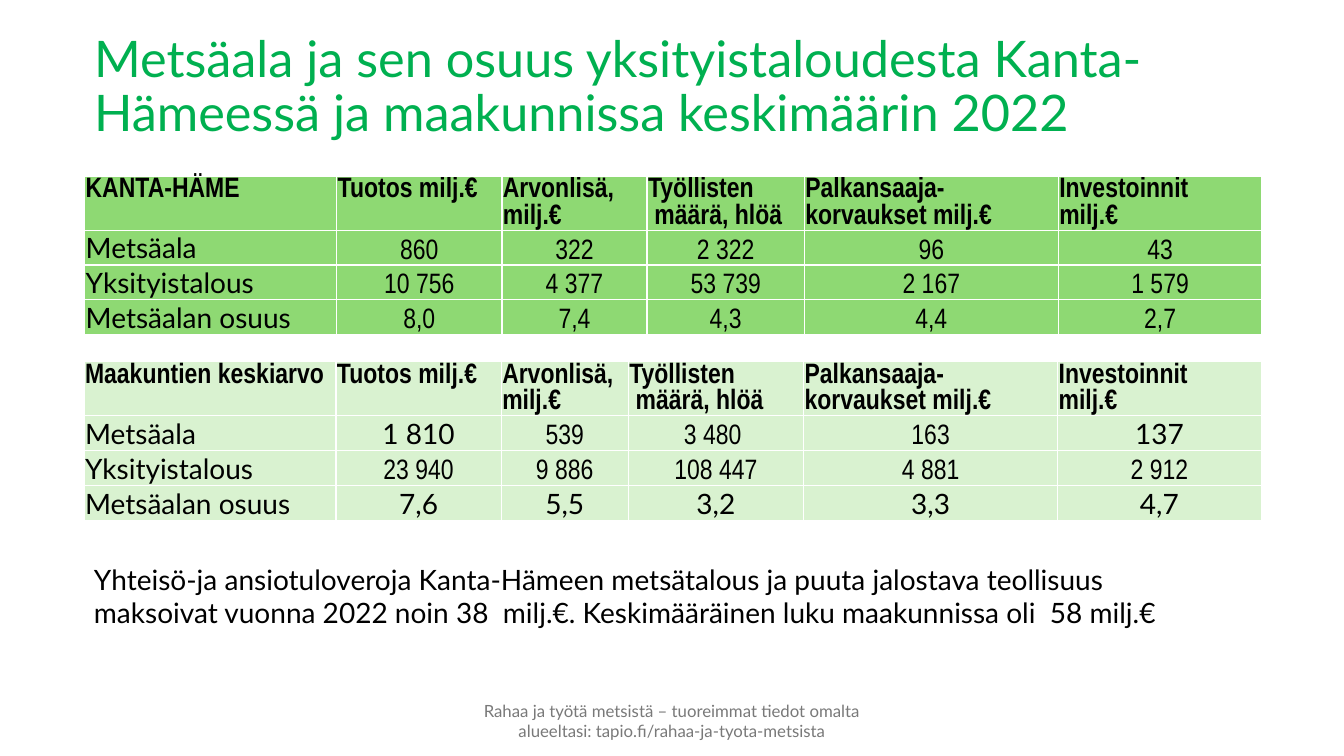
from dataclasses import dataclass

from lxml import etree
from pptx import Presentation
from pptx.dml.color import RGBColor
from pptx.enum.text import MSO_ANCHOR, MSO_AUTO_SIZE, PP_ALIGN
from pptx.oxml.ns import qn
from pptx.util import Inches, Pt

LEFT, CENTER = PP_ALIGN.LEFT, PP_ALIGN.CENTER
TOP, MIDDLE, BOTTOM = MSO_ANCHOR.TOP, MSO_ANCHOR.MIDDLE, MSO_ANCHOR.BOTTOM
NO_AUTOFIT = MSO_AUTO_SIZE.NONE

# Colours and fonts
BLACK = RGBColor(0x00, 0x00, 0x00)
WHITE = RGBColor(0xFF, 0xFF, 0xFF)
GREY = RGBColor(0x79, 0x79, 0x79)
TITLE_GREEN = RGBColor(0x00, 0xB0, 0x50)
STRONG_GREEN = RGBColor(0x8E, 0xD9, 0x73)
PALE_GREEN = RGBColor(0xD9, 0xF2, 0xD0)
LATO, NARROW = "Lato", "Arial Narrow"

# Grid of 80 columns by 45 rows
SLIDE_WIDTH, SLIDE_HEIGHT = Inches(13.333), Inches(7.5)
GRID_COLUMNS, GRID_ROWS = 80, 45
HEADER_ROWS, BODY_ROWS = 3.12, 2.04


def across(columns: float) -> int:
    return round(SLIDE_WIDTH * columns / GRID_COLUMNS)


def down(rows: float) -> int:
    return round(SLIDE_HEIGHT * rows / GRID_ROWS)


@dataclass(frozen=True)
class Area:
    left: float
    top: float
    width: float
    height: float

    def lengths(self) -> tuple[int, int, int, int]:
        return across(self.left), down(self.top), across(self.width), down(self.height)


@dataclass(frozen=True)
class RegionTable:
    region: str
    left: float
    top: float
    column_widths: tuple[float, ...]
    fill: RGBColor
    figures: tuple[tuple[str, ...], ...]
    lato_cells: frozenset[tuple[int, int]]


HEADINGS = ("Tuotos milj.€", "Arvonlisä, milj.€", "Työllisten\n määrä, hlöä",
            "Palkansaaja-korvaukset milj.€", "Investoinnit\nmilj.€")
ROW_LABELS = ("Metsäala", "Yksityistalous", "Metsäalan osuus")

TABLES = (
    RegionTable(
        "KANTA-HÄME", 5.04, 10.5, (15, 9.84, 8.64, 9.36, 15.12, 12.12), STRONG_GREEN,
        (("860", "322", "2 322", "96", "43"),
         ("10 756", "4 377", "53 739", "2 167", "1 579"),
         ("8,0", "7,4", "4,3", "4,4", "2,7")),
        frozenset(),
    ),
    RegionTable(
        "Maakuntien keskiarvo", 5, 21.54, (15, 9.84, 7.56, 10.44, 15.12, 12.12), PALE_GREEN,
        (("1 810", "539", "3 480 ", "163", "137"),
         ("23 940", "9 886", "108 447", "4 881", "2 912"),
         ("7,6", "5,5", "3,2", "3,3", "4,7")),
        frozenset({(1, 1), (1, 5)} | {(3, column) for column in range(1, 6)}),
    ),
)

TITLE = "Metsäala ja sen osuus yksityistaloudesta Kanta-Hämeessä ja maakunnissa keskimäärin 2022"
TAX_NOTE = ("Yhteisö-ja ansiotuloveroja Kanta-Hämeen metsätalous ja puuta jalostava teollisuus "
            "maksoivat vuonna 2022 noin 38  milj.€. Keskimääräinen luku maakunnissa oli  58 milj.€")
FOOTER = ("Rahaa ja työtä metsistä – tuoreimmat tiedot omalta alueeltasi: "
          "tapio.fi/rahaa-ja-tyota-metsista")


def write_text(text_frame, text: str, *, size: float = 20, font: str = LATO,
               color: RGBColor = BLACK, bold: bool = False, align=LEFT,
               line_spacing: float = 1.0) -> None:
    text_frame.text = text
    for paragraph in text_frame.paragraphs:
        paragraph.alignment = align
        paragraph.line_spacing = line_spacing
        for run in paragraph.runs:
            run.font.size = Pt(size)
            run.font.name = font
            run.font.bold = bold
            run.font.color.rgb = color


def add_text(slide, area: Area, text: str, *, anchor=TOP, **text_format) -> None:
    text_frame = slide.shapes.add_textbox(*area.lengths()).text_frame
    text_frame.word_wrap = True
    text_frame.vertical_anchor = anchor
    write_text(text_frame, text, **text_format)


def set_title(slide, area: Area, text: str, **text_format) -> None:
    title = slide.shapes.title
    title.left, title.top, title.width, title.height = area.lengths()
    title.text_frame.word_wrap = True
    title.text_frame.auto_size = NO_AUTOFIT
    title.text_frame.vertical_anchor = MIDDLE
    write_text(title.text_frame, text, **text_format)


def add_borders(cell, color: RGBColor, width: float) -> None:
    properties = cell._tc.get_or_add_tcPr()
    for side in ("a:lnL", "a:lnR", "a:lnT", "a:lnB"):
        line = etree.SubElement(properties, qn(side), w=str(Pt(width)))
        fill = etree.SubElement(line, qn("a:solidFill"))
        etree.SubElement(fill, qn("a:srgbClr"), val=str(color))


def format_cell(cell, fill: RGBColor, anchor) -> None:
    cell.margin_left = cell.margin_right = cell.margin_top = Inches(0.01)
    cell.margin_bottom = 0
    cell.vertical_anchor = anchor
    add_borders(cell, WHITE, 1)
    cell.fill.solid()
    cell.fill.fore_color.rgb = fill


def add_region_table(slide, region_table: RegionTable) -> None:
    rows = [(region_table.region, *HEADINGS)]
    rows += [(label, *values) for label, values in zip(ROW_LABELS, region_table.figures)]
    widths = region_table.column_widths
    area = Area(region_table.left, region_table.top, sum(widths),
                HEADER_ROWS + BODY_ROWS * len(ROW_LABELS))
    table = slide.shapes.add_table(len(rows), len(widths), *area.lengths()).table
    table.first_row = table.horz_banding = False
    for column, width in zip(table.columns, widths):
        column.width = across(width)
    for row_index, texts in enumerate(rows):
        is_header = row_index == 0
        table.rows[row_index].height = down(HEADER_ROWS if is_header else BODY_ROWS)
        for column_index, text in enumerate(texts):
            is_label = column_index == 0
            is_lato = not is_header and (
                is_label or (row_index, column_index) in region_table.lato_cells)
            cell = table.cell(row_index, column_index)
            format_cell(cell, region_table.fill, TOP if is_header else BOTTOM)
            write_text(cell.text_frame, text, font=LATO if is_lato else NARROW,
                       bold=is_header, align=LEFT if is_header or is_label else CENTER)


def main() -> None:
    presentation = Presentation()
    presentation.slide_width, presentation.slide_height = SLIDE_WIDTH, SLIDE_HEIGHT
    slide = presentation.slides.add_slide(presentation.slide_layouts.get_by_name("Title Only"))

    # Title
    set_title(slide, Area(5, 0.9, 73.14, 8.7), TITLE, size=36, color=TITLE_GREEN,
              line_spacing=0.9)

    # Regional figures
    for region_table in TABLES:
        add_region_table(slide, region_table)

    # Tax note and footer
    add_text(slide, Area(5, 33.18, 65.4, 4.62), TAX_NOTE)
    add_text(slide, Area(26.2, 41.7, 27.6, 2.4), FOOTER, anchor=MIDDLE, size=12,
             color=GREY, align=CENTER)

    presentation.save("out.pptx")


if __name__ == "__main__":
    main()
